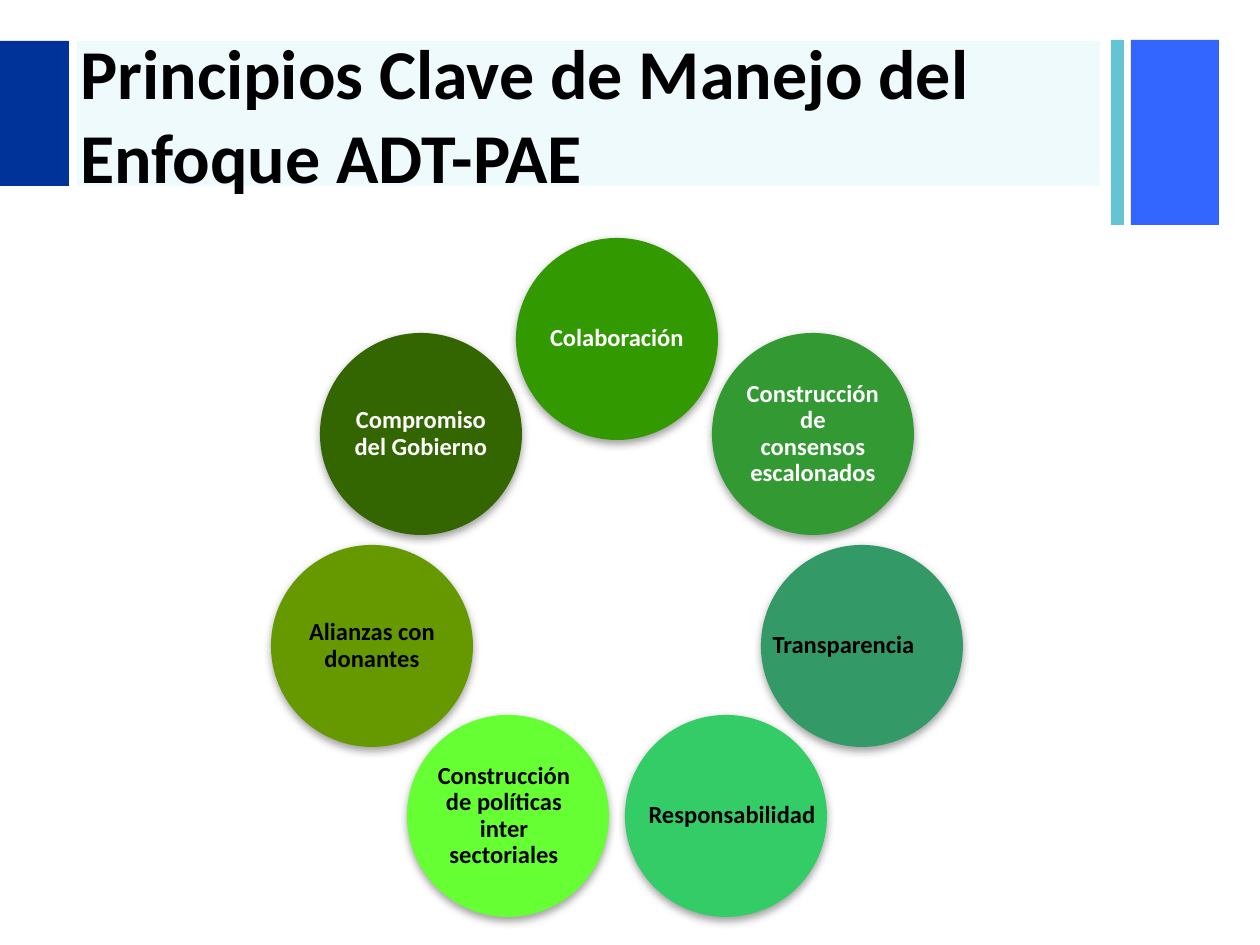
import math

from pptx import Presentation
from pptx import util as u
from pptx.dml.color import RGBColor
from pptx.enum import shapes, text
from pptx.oxml import parse_xml
from pptx.oxml.ns import nsdecls, qn

PX = 914400 // 126
FONT = "Calibri"
RING_X, RING_Y, RING_RADIUS = 617, 590, 251
DIAMETER = 202
LABEL_HEIGHT = 142

BANDS = [
    (1131, 40, 88, 185, "3366FF"),
    (1111, 40, 13, 185, "65C4D2"),
    (0, 41, 69, 145, "003399"),
]

# name, fill, text colour, label width, label shift
PRINCIPLES = [
    ("Colaboración", "339900", "FFFFFF", 142, 0),
    ("Construcción de\vconsensos escalonados", "339933", "FFFFFF", 142, 0),
    ("Transparencia", "339966", "000000", 173, -18),
    ("Responsabilidad", "33CC66", "000000", 190, 6),
    ("Construcción de políticas inter sectoriales", "66FF33", "000000", 142, -4),
    ("Alianzas con donantes", "669900", "000000", 142, 0),
    ("Compromiso del Gobierno", "336600", "FFFFFF", 142, 0),
]


def color(value):
    return RGBColor.from_string(value)


def place(left, top, width, height):
    return [round(length) * PX for length in (left, top, width, height)]


def add_filled(slide, preset, box, fill):
    figure = slide.shapes.add_shape(preset, *place(*box))
    figure.shadow.inherit = False
    figure.fill.solid()
    figure.fill.fore_color.rgb = color(fill)
    figure.line.fill.background()
    return figure


def set_opacity(figure, percent):
    tint = figure.fill._xPr.find(qn("a:solidFill"))[0]
    tint.append(parse_xml(f'<a:alpha {nsdecls("a")} val="{percent * 1000}"/>'))


def add_shadow(figure):
    effects = figure._element.spPr.find(qn("a:effectLst"))
    effects.append(parse_xml(
        f'<a:outerShdw {nsdecls("a")} blurRad="{u.Pt(5)}" dist="{u.Pt(2)}" '
        'dir="5400000" rotWithShape="0"><a:srgbClr val="808080">'
        '<a:alpha val="75000"/></a:srgbClr></a:outerShdw>'))


def add_text(slide, box, words, size, ink):
    frame = slide.shapes.add_textbox(*place(*box)).text_frame
    frame.word_wrap = True
    frame.vertical_anchor = text.MSO_ANCHOR.MIDDLE
    paragraph = frame.paragraphs[0]
    paragraph.text = words
    for run in paragraph.runs:
        run.font.name = FONT
        run.font.size = u.Pt(size)
        run.font.bold = True
        run.font.color.rgb = color(ink)
    return frame


def add_label(slide, box, words, ink):
    frame = add_text(slide, box, words, 14, ink)
    frame.margin_left = frame.margin_right = 2 * PX
    frame.margin_top = frame.margin_bottom = 2 * PX
    frame.paragraphs[0].alignment = text.PP_ALIGN.CENTER
    frame.paragraphs[0].line_spacing = 0.9


def add_principle(slide, index, name, fill, ink, label_width, shift):
    angle = math.tau * index / len(PRINCIPLES)
    x = RING_X + RING_RADIUS * math.sin(angle)
    y = RING_Y - RING_RADIUS * math.cos(angle)
    circle = add_filled(
        slide, shapes.MSO_SHAPE.OVAL,
        (x - DIAMETER / 2, y - DIAMETER / 2, DIAMETER, DIAMETER), fill)
    add_shadow(circle)
    label_box = (x + shift - label_width / 2, y - LABEL_HEIGHT / 2,
                 label_width, LABEL_HEIGHT)
    add_label(slide, label_box, name, ink)


def add_header(slide):
    for *box, fill in BANDS:
        add_filled(slide, shapes.MSO_SHAPE.RECTANGLE, box, fill)
    title_band = add_filled(
        slide, shapes.MSO_SHAPE.RECTANGLE, (77, 41, 1023, 145), "14C5D0")
    set_opacity(title_band, 7)
    add_text(slide, (68, 43, 1042, 141),
             "Principios Clave de Manejo del Enfoque ADT-PAE", 40, "000000")


def main():
    deck = Presentation()
    deck.slide_width, deck.slide_height = u.Inches(10), u.Inches(7.5)
    slide = deck.slides.add_slide(deck.slide_layouts[6])
    add_header(slide)
    for index, principle in enumerate(PRINCIPLES):
        add_principle(slide, index, *principle)
    deck.save("out.pptx")


if __name__ == "__main__":
    main()
